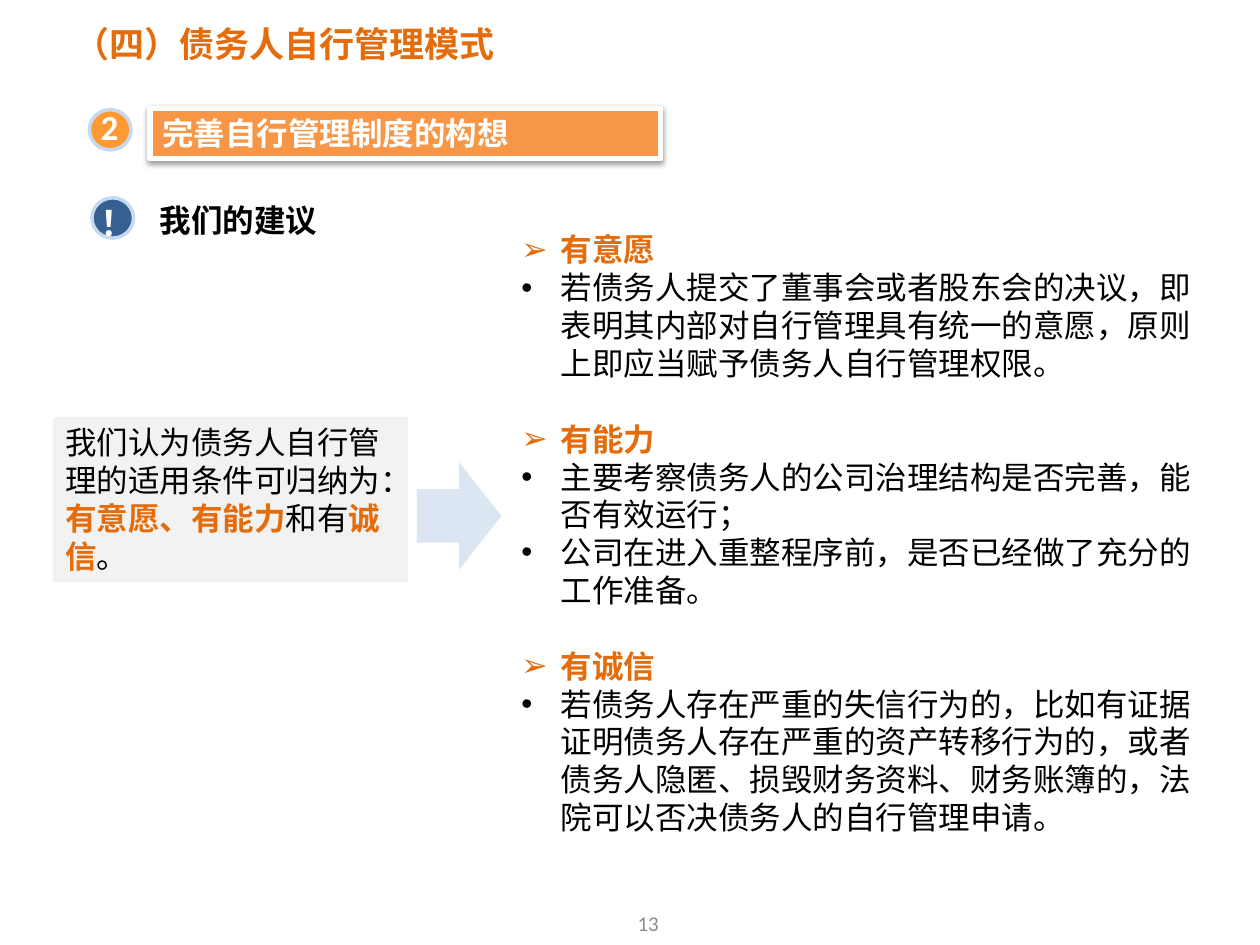
import pptx
import pptx.util
import pptx.dml.color
import pptx.enum.shapes
import pptx.enum.text
import pptx.oxml
import pptx.oxml.ns
from dataclasses import dataclass
from lxml import etree

Inches = pptx.util.Inches
Pt = pptx.util.Pt
SHAPES = pptx.enum.shapes.MSO_SHAPE
ANCHOR = pptx.enum.text.MSO_ANCHOR
ALIGN = pptx.enum.text.PP_ALIGN
qn = pptx.oxml.ns.qn


@dataclass(frozen=True)
class Theme:
    cjk: str = "Noto Sans CJK SC"
    latin: str = "Calibri"
    accent: str = "E46C0A"
    banner: str = "F79646"
    number: str = "FF9933"
    notice: str = "376092"
    ring: str = "C6D9F1"
    panel: str = "F2F2F2"
    arrow: str = "DCE6F2"
    ink: str = "000000"
    white: str = "FFFFFF"
    muted: str = "8C8C8C"
    heading: int = 20
    body: int = 18
    small: int = 12
    section_gap: float = 21.75


THEME = Theme()


def rgb(value):
    return pptx.dml.color.RGBColor.from_string(value)


def style_run(run, color, size=THEME.body, bold=False, font=THEME.cjk):
    run.font.name = font
    run.font.size = Pt(size)
    run.font.bold = bold
    run.font.color.rgb = rgb(color)
    east_asian = etree.SubElement(run.font._element, qn("a:ea"))
    east_asian.set("typeface", THEME.cjk)


def add_label(parent, box, text, color, size=THEME.body, bold=True, font=THEME.cjk):
    label = parent.add_textbox(*map(Inches, box))
    label.text_frame.word_wrap = True
    label.text_frame.text = text
    style_run(label.text_frame.paragraphs[0].runs[0], color, size, bold, font)
    return label


def add_block(parent, preset, box, fill, line=None, width=0):
    block = parent.add_shape(preset, *map(Inches, box))
    block.shadow.inherit = False
    block.fill.solid()
    block.fill.fore_color.rgb = rgb(fill)
    if line:
        block.line.color.rgb = rgb(line)
        block.line.width = Pt(width)
    else:
        block.line.fill.background()
    block.text_frame.word_wrap = True
    block.text_frame.vertical_anchor = ANCHOR.TOP
    block.text_frame.paragraphs[0].alignment = ALIGN.LEFT
    return block


def add_shadow(block):
    effects = block._element.spPr.find(qn("a:effectLst"))
    effects.append(pptx.oxml.parse_xml(
        '<a:outerShdw xmlns:a="http://schemas.openxmlformats.org/drawingml/2006/main" '
        f'blurRad="{Pt(3.1)}" dist="{Pt(1.6)}" dir="5400000" rotWithShape="0">'
        '<a:srgbClr val="000000"><a:alpha val="38000"/></a:srgbClr></a:outerShdw>'))


def add_bullet(paragraph, mark):
    properties = paragraph._p.get_or_add_pPr()
    properties.set("marL", str(Inches(0.31)))
    properties.set("indent", str(Inches(-0.31)))
    etree.SubElement(properties, qn("a:buFont")).set("typeface", "Arial")
    etree.SubElement(properties, qn("a:buChar")).set("char", mark)


def add_title(slide, box):
    title = add_label(slide.shapes, box, "（四）债务人自行管理模式", THEME.accent, THEME.heading)
    frame = title.text_frame
    frame.word_wrap = False
    frame.margin_left = frame.margin_right = Inches(0.08)
    frame.margin_top = frame.margin_bottom = Inches(0.04)


def add_badge(slide, circle_box, label_box, text, fill):
    badge = slide.shapes.add_group_shape()
    add_block(badge.shapes, SHAPES.OVAL, circle_box, fill, THEME.ring, 2)
    add_label(badge.shapes, label_box, text, THEME.white, THEME.heading, font=THEME.latin)


def add_banner(slide, box):
    banner = add_block(slide.shapes, SHAPES.RECTANGLE, box, THEME.banner, THEME.white, 3)
    add_shadow(banner)
    banner_run = banner.text_frame.paragraphs[0].add_run()
    banner_run.text = "完善自行管理制度的构想"
    style_run(banner_run, THEME.white, bold=True)


def add_summary(slide, box):
    panel = add_block(slide.shapes, SHAPES.RECTANGLE, box, THEME.panel)
    phrases = [("我们认为债务人自行管理的适用条件可归纳为：", False),
               ("有意愿、有能力", True), ("和有", False), ("诚信", True), ("。", False)]
    for phrase, stressed in phrases:
        run = panel.text_frame.paragraphs[0].add_run()
        run.text = phrase
        style_run(run, THEME.accent if stressed else THEME.ink, bold=stressed)


def add_conditions(slide, box):
    conditions = [
        ("有意愿", ["若债务人提交了董事会或者股东会的决议，即表明其内部对自行管理具有统一的意愿，"
                 "原则上即应当赋予债务人自行管理权限。"]),
        ("有能力", ["主要考察债务人的公司治理结构是否完善，能否有效运行；",
                 "公司在进入重整程序前，是否已经做了充分的工作准备。"]),
        ("有诚信", ["若债务人存在严重的失信行为的，比如有证据证明债务人存在严重的资产转移行为的，"
                 "或者债务人隐匿、损毁财务资料、财务账簿的，法院可以否决债务人的自行管理申请。"]),
    ]
    frame = slide.shapes.add_textbox(*map(Inches, box)).text_frame
    frame.word_wrap = True
    for index, (heading, points) in enumerate(conditions):
        for row, text in enumerate([heading, *points]):
            is_heading = row == 0
            first = index == 0 and is_heading
            paragraph = frame.paragraphs[0] if first else frame.add_paragraph()
            paragraph.text = text
            add_bullet(paragraph, "➢" if is_heading else "•")
            if is_heading and not first:
                paragraph.space_before = Pt(THEME.section_gap)
            style_run(paragraph.runs[0], THEME.accent if is_heading else THEME.ink,
                      bold=is_heading)


def add_page_number(slide, box):
    number = add_label(slide.shapes, box, "13", THEME.muted, THEME.small, False, THEME.latin)
    number.text_frame.vertical_anchor = ANCHOR.MIDDLE
    number.text_frame.paragraphs[0].alignment = ALIGN.CENTER


def main():
    deck = pptx.Presentation()
    deck.slide_width, deck.slide_height = Inches(10), Inches(7.5)
    slide = deck.slides.add_slide(deck.slide_layouts[6])

    # Page number and headings
    add_page_number(slide, (3.98, 7.13, 2.33, 0.4))
    add_title(slide, (0.51, 0.14, 3.53, 0.42))
    add_banner(slide, (1.19, 0.86, 4.05, 0.4))
    add_badge(slide, (0.71, 0.87, 0.33, 0.32), (0.7, 0.79, 1.23, 0.44), "2", THEME.number)
    add_badge(slide, (0.73, 1.57, 0.33, 0.32), (0.7, 1.55, 1.23, 0.44), "！", THEME.notice)
    add_label(slide.shapes, (1.17, 1.55, 2.41, 0.4), "我们的建议", THEME.ink)

    # Summary leading to the three conditions
    add_summary(slide, (0.42, 3.31, 2.82, 1.31))
    add_conditions(slide, (4.04, 1.78, 5.69, 4.95))
    add_block(slide.shapes, SHAPES.RIGHT_ARROW, (3.31, 3.67, 0.67, 0.85), THEME.arrow)

    deck.save("out.pptx")


if __name__ == "__main__":
    main()
